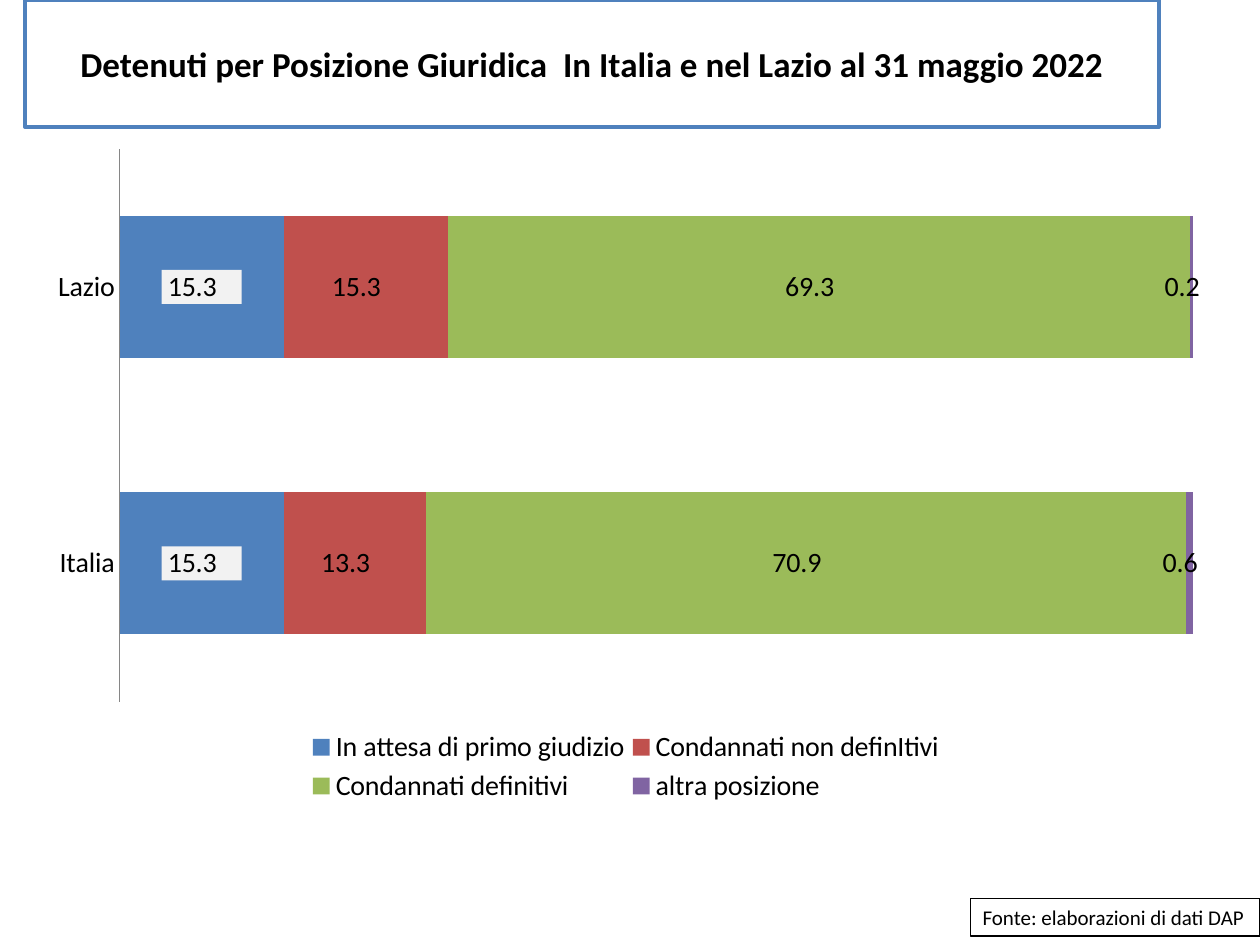
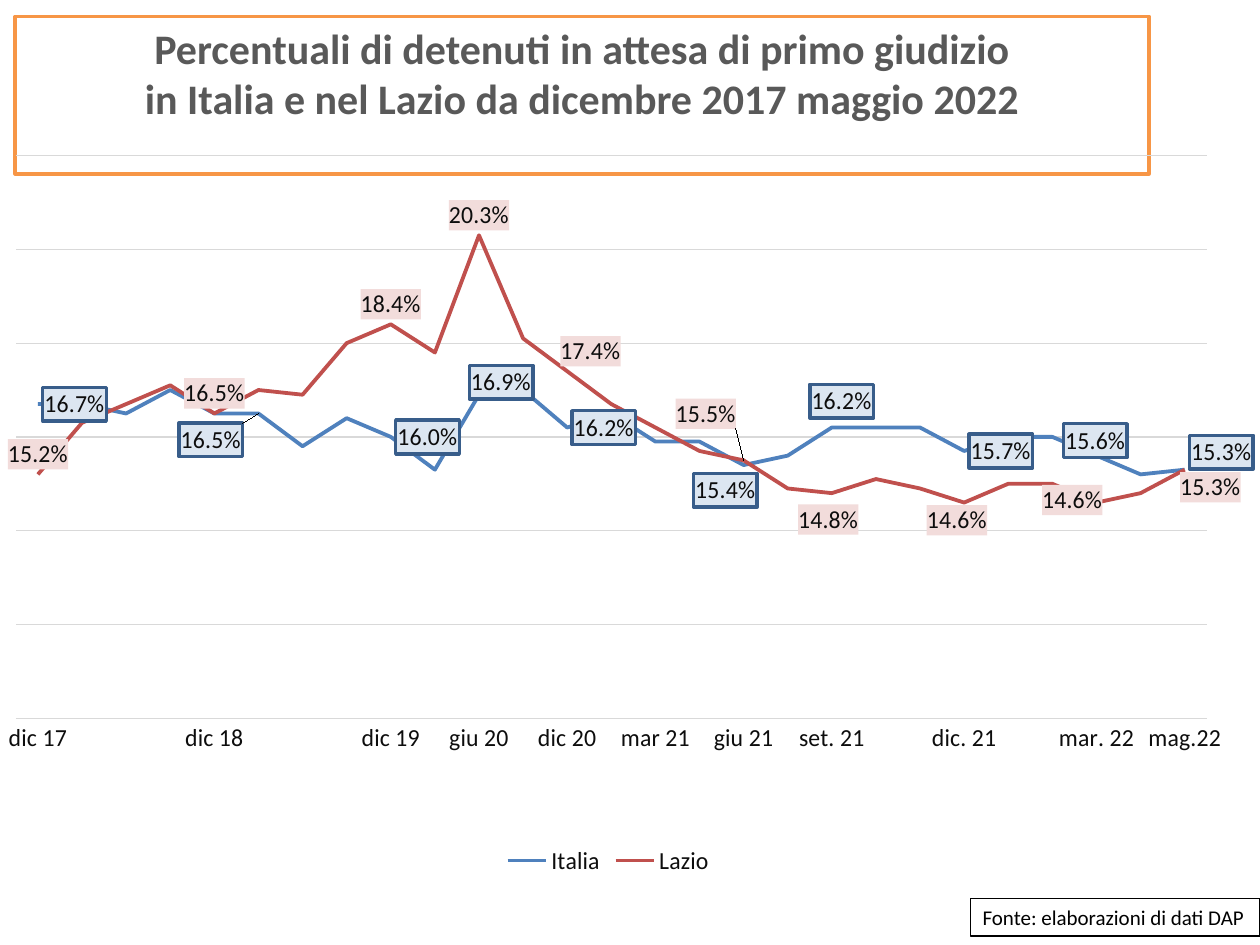
from dataclasses import dataclass

from lxml import etree
from pptx import Presentation
from pptx.chart.data import CategoryChartData
from pptx.dml.color import RGBColor
from pptx.enum.chart import XL_CHART_TYPE, XL_LABEL_POSITION, XL_LEGEND_POSITION, XL_TICK_MARK
from pptx.enum.shapes import MSO_SHAPE
from pptx.enum.text import MSO_ANCHOR, PP_ALIGN
from pptx.oxml import parse_xml
from pptx.oxml.ns import nsdecls, qn
from pptx.util import Inches, Pt

RECTANGLE = MSO_SHAPE.RECTANGLE
STACKED_BARS = XL_CHART_TYPE.BAR_STACKED_100
LINES = XL_CHART_TYPE.LINE
ABOVE, RIGHT = XL_LABEL_POSITION.ABOVE, XL_LABEL_POSITION.RIGHT
BOTTOM = XL_LEGEND_POSITION.BOTTOM
NO_TICKS = XL_TICK_MARK.NONE
TOP, MIDDLE = MSO_ANCHOR.TOP, MSO_ANCHOR.MIDDLE
LEFT, CENTER = PP_ALIGN.LEFT, PP_ALIGN.CENTER


@dataclass(frozen=True)
class Theme:
    font: str = "Calibri"
    white: str = "FFFFFF"
    black: str = "000000"
    ink: str = "0D0D0D"
    grey: str = "595959"
    grid: str = "D9D9D9"
    axis: str = "868686"
    blue: str = "4F81BD"
    red: str = "C0504D"
    green: str = "9BBB59"
    purple: str = "8064A2"
    orange: str = "F79646"
    pale_grey: str = "F2F2F2"
    pale_blue: str = "DCE6F1"
    pale_red: str = "F2DCDB"
    dark_blue: str = "385D8A"
    source_size: int = 12
    line_chart_size: int = 14
    bar_chart_size: int = 16
    bar_title_size: int = 20
    line_title_size: int = 24


theme = Theme()
rgb = RGBColor.from_string

PERCENT = "0.0%"
ACCOUNTING = r'_-* #,##0.0\ _€_-;\-* #,##0.0\ _€_-;_-* "-"??\ _€_-;_-@_-'


def set_layout(parent, index, size, place, absolute=True):
    """Place a chart part; place is x, y and perhaps w, h in inches, size that of the chart."""
    for old in parent.findall(qn("c:layout")):
        parent.remove(old)
    layout = parse_xml(f"<c:layout {nsdecls('c')}><c:manualLayout/></c:layout>")
    settings = []
    if parent.tag == qn("c:plotArea"):
        settings.append(("layoutTarget", "inner"))
    if absolute:
        settings += [("xMode", "edge"), ("yMode", "edge")]
    settings += [(name, str(length / side)) for name, length, side in zip("xywh", place, size * 2)]
    for name, value in settings:
        etree.SubElement(layout[0], qn(f"c:{name}")).set("val", value)
    parent.insert(index, layout)


def paint_label(label, fill, border=None):
    """Fill and outline a data label that already has its font set."""
    line = f'<a:ln w="25400"><a:solidFill><a:srgbClr val="{border}"/></a:solidFill></a:ln>' if border else ""
    label.find(qn("c:txPr")).addprevious(parse_xml(
        f'<c:spPr {nsdecls("c", "a")}><a:solidFill><a:srgbClr val="{fill}"/></a:solidFill>{line}</c:spPr>'))


deck = Presentation()
deck.slide_width, deck.slide_height = Inches(10), Inches(7.5)

# Framed texts and charts of both pages
source = ("Fonte: elaborazioni di dati DAP", (7.7, 7.13, 2.3, 0.3), theme.black, 0.75,
          theme.source_size, theme.black, False, LEFT, MIDDLE)
bar_title = ("Detenuti per Posizione Giuridica  In Italia e nel Lazio al 31 maggio 2022",
             (0.2, 0, 9, 1.01), theme.blue, 2, theme.bar_title_size, theme.black, True, CENTER, MIDDLE)
line_title = ("Percentuali di detenuti in attesa di primo giudizio\v"
              "in Italia e nel Lazio da dicembre 2017 maggio 2022",
              (0.12, 0.13, 9, 1.25), theme.orange, 2, theme.line_title_size, theme.grey, True, CENTER, TOP)

bar_data = CategoryChartData(number_format="0.0")
bar_data.categories = ["Lazio", "Italia"]
for name, values in (
    ("In attesa di primo giudizio", (15.3, 15.3)),
    ("Condannati non definItivi", (15.3, 13.3)),
    ("Condannati definitivi", (69.3, 70.9)),
    ("altra posizione", (0.2, 0.6)),
):
    bar_data.add_series(name, values)

month_labels = {0: "mag.22", 2: "mar. 22", 5: "dic. 21", 8: "set. 21", 10: "giu 21", 12: "mar 21",
                14: "dic 20", 16: "giu 20", 18: "dic 19", 22: "dic 18", 26: "dic 17"}
line_data = CategoryChartData(number_format=PERCENT)
line_data.categories = [month_labels.get(month, "") for month in range(27)]
line_data.add_series("Italia", (
    0.153, 0.152, 0.156, 0.16, 0.16, 0.157, 0.162, 0.162, 0.162, 0.156, 0.154, 0.159, 0.159, 0.165,
    0.162, 0.17, 0.169, 0.153, 0.16, 0.164, 0.158, 0.165, 0.165, 0.17, 0.165, 0.167, 0.167))
line_data.add_series("Lazio", (
    0.153, 0.148, 0.146, 0.15, 0.15, 0.146, 0.149, 0.151, 0.148, 0.149, 0.155, 0.157, 0.162, 0.167,
    0.174, 0.181, 0.203, 0.178, 0.184, 0.18, 0.169, 0.17, 0.165, 0.171, 0.167, 0.163, 0.152))

pages = (
    (bar_title, STACKED_BARS, bar_data, (0.28, 1.08, 9.44, 5.35), (0.67, 0.1, 8.52, 4.39),
     theme.bar_chart_size, theme.black, theme.axis),
    (line_title, LINES, line_data, (0, 1.23, 9.96, 5.76), (0.13, 0, 9.75, 4.47),
     theme.line_chart_size, theme.ink, theme.grid),
)

charts = []
for title, chart_type, data, chart_place, plot_place, chart_size, chart_color, axis_color in pages:
    page = deck.slides.add_slide(deck.slide_layouts[6])
    for text, place, border, width, size, color, bold, alignment, anchor in (title, source):
        box = page.shapes.add_shape(RECTANGLE, *map(Inches, place))
        box.shadow.inherit = False
        box.fill.solid()
        box.fill.fore_color.rgb = rgb(theme.white)
        box.line.color.rgb = rgb(border)
        box.line.width = Pt(width)
        frame = box.text_frame
        frame.word_wrap = bold
        frame.vertical_anchor = anchor
        frame.text = text
        para = frame.paragraphs[0]
        para.alignment = alignment
        for span in para.runs:
            span.font.name = theme.font
            span.font.size = Pt(size)
            span.font.bold = bold
            span.font.color.rgb = rgb(color)

    chart = page.shapes.add_chart(chart_type, *map(Inches, chart_place), data).chart
    chart.has_title = False
    chart.font.name = theme.font
    chart.font.size = Pt(chart_size)
    chart.font.color.rgb = rgb(chart_color)
    chart.has_legend = True
    chart.legend.position = BOTTOM
    chart.legend.include_in_layout = False
    chart.plots[0].vary_by_categories = False
    chart.value_axis.visible = False
    months_or_areas = chart.category_axis
    months_or_areas.reverse_order = True
    months_or_areas.major_tick_mark = NO_TICKS
    months_or_areas.format.line.color.rgb = rgb(axis_color)
    months_or_areas.format.line.width = Pt(0.75)
    set_layout(chart._chartSpace.chart.plotArea, 0, chart_place[2:], plot_place)
    charts.append(chart)

bar_chart, line_chart = charts

# Legal position: stacked bars
bar_chart.value_axis.has_major_gridlines = False
bar_chart.plots[0].gap_width = 95
bar_chart.plots[0].overlap = 100
set_layout(bar_chart.legend._element, 1, (9.44, 5.35), (2.14, 4.68, 5.1, 0.65))
for series, color in zip(bar_chart.series, (theme.blue, theme.red, theme.green, theme.purple)):
    series.format.fill.solid()
    series.format.fill.fore_color.rgb = rgb(color)
    labels = series.data_labels
    labels.show_value = True
    labels.number_format = ACCOUNTING
    labels.number_format_is_linked = False
    labels.font.size = Pt(theme.bar_chart_size)
paint_label(bar_chart.series[0].data_labels._element, theme.pale_grey)

# Awaiting first judgement: lines over time
value_axis = line_chart.value_axis
value_axis.minimum_scale, value_axis.maximum_scale, value_axis.major_unit = 0.1, 0.22, 0.02
value_axis.has_major_gridlines = True
value_axis.major_gridlines.format.line.color.rgb = rgb(theme.grid)
value_axis.major_gridlines.format.line.width = Pt(0.75)
line_chart.category_axis._element.find(qn("c:noMultiLvlLbl")).addprevious(
    parse_xml(f'<c:tickLblSkip {nsdecls("c")} val="1"/>'))

# Labelled months, each with the shift of its label in inches
italy_shifts = {0: (0, -0.14), 2: (-0.31, -0.12), 5: None, 8: (-0.22, -0.21), 10: (-0.45, 0.2),
                14: None, 16: (-0.12, -0.1), 18: None, 21: (-0.69, 0.21), 26: None}
lazio_shifts = {0: (0.21, 0.3), 2: (-0.2, 0.14), 5: (-0.06, 0.3), 8: (-0.03, 0.37), 10: (-0.31, -0.21),
                14: (0.19, 0), 16: None, 18: None, 22: None, 26: None}
line_styles = (
    (theme.blue, RIGHT, italy_shifts, theme.pale_blue, theme.dark_blue),
    (theme.red, ABOVE, lazio_shifts, theme.pale_red, None),
)
for series, (color, position, shifts, fill, border) in zip(line_chart.series, line_styles):
    series.smooth = False
    series.format.line.color.rgb = rgb(color)
    series.format.line.width = Pt(2.25)
    series.data_labels.show_value = False
    for month, shift in shifts.items():
        label = series.points[month].data_label
        label.position = position
        label.font.name = theme.font
        label.font.size = Pt(theme.line_chart_size)
        label.font.color.rgb = rgb(theme.ink)
        element = label._get_or_add_dLbl()
        element.find(qn("c:txPr")).addprevious(
            parse_xml(f'<c:numFmt {nsdecls("c")} formatCode="{PERCENT}" sourceLinked="0"/>'))
        paint_label(element, fill, border)
        if shift:
            set_layout(element, 1, (9.96, 5.76), shift, absolute=False)

deck.save("out.pptx")
